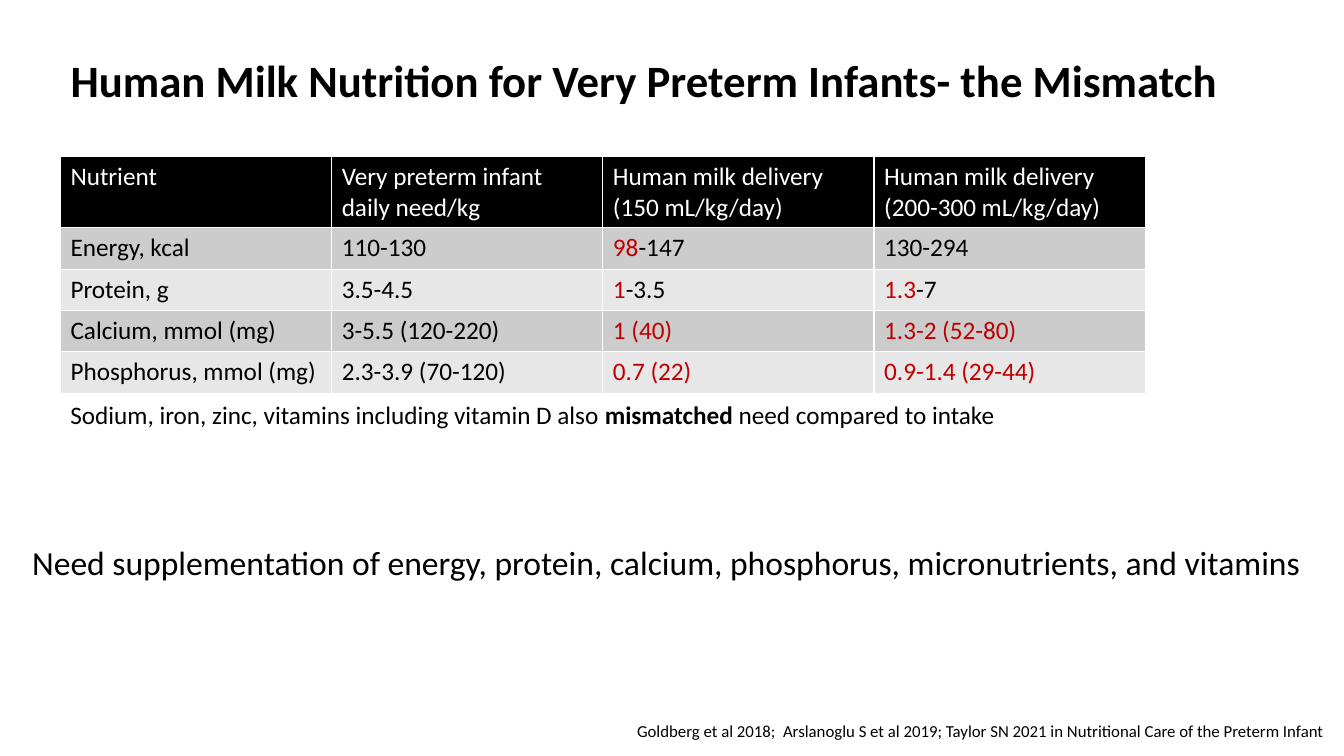
"""Build the slide on human milk nutrition for very preterm infants."""
from dataclasses import dataclass

from pptx import Presentation
from pptx.dml.color import RGBColor as Color
from pptx.enum.text import MSO_ANCHOR as Anchor, MSO_AUTO_SIZE as AutoSize, PP_ALIGN as Align
from pptx.util import Inches, Pt

TITLE = "Human Milk Nutrition for Very Preterm Infants- the Mismatch"
HEADER = [
    "Nutrient",
    "Very preterm infant daily need/kg",
    "Human milk delivery (150 mL/kg/day)",
    "Human milk delivery (200-300 mL/kg/day)",
]
# Each delivery is a (shortfall, sufficient) pair.
NUTRIENTS = [
    ("Energy, kcal", "110-130", ("98", "-147"), ("", "130-294")),
    ("Protein, g", "3.5-4.5", ("1", "-3.5"), ("1.3", "-7")),
    ("Calcium, mmol (mg)", "3-5.5 (120-220)", ("1 (40)", ""), ("1.3-2 (52-80)", "")),
    ("Phosphorus, mmol (mg)", "2.3-3.9 (70-120)", ("0.7 (22)", ""), ("0.9-1.4 (29-44)", "")),
]
NOTE = ("Sodium, iron, zinc, vitamins including vitamin D also ", "mismatched",
        " need compared to intake")
MESSAGE = "Need supplementation of energy, protein, calcium, phosphorus, micronutrients, and vitamins"
CITATION = ("Goldberg et al 2018;  Arslanoglu S et al 2019; "
            "Taylor SN 2021 in Nutritional Care of the Preterm Infant")

WIDTH, HEIGHT = 13.33, 7.5
MARGIN = 0.6
TABLE_TOP, COLUMN, HEADER_ROW, ROW = 1.55, 2.69, 0.69, 0.41


@dataclass(frozen=True)
class Theme:
    """Hold the colours, font and type sizes."""
    font: str = "Calibri"
    ink: str = "000000"
    paper: str = "FFFFFF"
    alert: str = "C00000"
    bands: tuple = ("CCCCCC", "E7E7E7")
    title: int = 32
    message: int = 24
    body: int = 18
    citation: int = 12


THEME = Theme()


def add_span(para, text, size, color=THEME.ink, bold=False):
    """Append one formatted run."""
    span = para.add_run()
    span.text = text
    span.font.name = THEME.font
    span.font.size = Pt(size)
    span.font.bold = bold
    span.font.color.rgb = Color.from_string(color)


def place(shape, left, top, width, height):
    """Position a shape given in inches."""
    shape.left, shape.top = Inches(left), Inches(top)
    shape.width, shape.height = Inches(width), Inches(height)


def add_line(page, area, spans, size, align=Align.LEFT):
    """Add a one-line text box from (text, bold) spans."""
    box = page.shapes.add_textbox(*map(Inches, area))
    box.text_frame.word_wrap = False
    box.text_frame.auto_size = AutoSize.SHAPE_TO_FIT_TEXT
    para = box.text_frame.paragraphs[0]
    para.alignment = align
    for text, bold in spans:
        add_span(para, text, size, bold=bold)


def fill_cell(cell, spans, background):
    """Write (text, color) spans into a filled cell."""
    cell.fill.solid()
    cell.fill.fore_color.rgb = Color.from_string(background)
    for text, color in spans:
        if text:
            add_span(cell.text_frame.paragraphs[0], text, THEME.body, color)


def add_title(page):
    """Format the title placeholder."""
    title = page.shapes.title
    place(title, MARGIN, 0.47, 11.79, 0.64)
    frame = title.text_frame
    frame.word_wrap = False
    frame.auto_size = AutoSize.NONE
    frame.vertical_anchor = Anchor.TOP
    frame.paragraphs[0].alignment = Align.LEFT
    add_span(frame.paragraphs[0], TITLE, THEME.title, bold=True)


def add_nutrients(page):
    """Add the table of needs and deliveries."""
    count = len(NUTRIENTS)
    area = (MARGIN, TABLE_TOP, COLUMN * len(HEADER), HEADER_ROW + ROW * count)
    table = page.shapes.add_table(count + 1, len(HEADER), *map(Inches, area)).table
    for column in table.columns:
        column.width = Inches(COLUMN)
    for index, row in enumerate(table.rows):
        row.height = Inches(ROW if index else HEADER_ROW)
    for cell, text in zip(table.rows[0].cells, HEADER):
        fill_cell(cell, [(text, THEME.paper)], THEME.ink)
    for index, (name, need, *deliveries) in enumerate(NUTRIENTS):
        pairs = [("", name), ("", need), *deliveries]
        for cell, (short, enough) in zip(table.rows[index + 1].cells, pairs):
            spans = [(short, THEME.alert), (enough, THEME.ink)]
            fill_cell(cell, spans, THEME.bands[index % 2])


def main():
    """Create and save the deck."""
    deck = Presentation()
    deck.slide_width, deck.slide_height = Inches(WIDTH), Inches(HEIGHT)
    page = deck.slides.add_slide(deck.slide_layouts[5])
    add_title(page)
    add_nutrients(page)
    note = [(text, text == "mismatched") for text in NOTE]
    add_line(page, (MARGIN, 3.91, 9.39, 0.4), note, THEME.body)
    add_line(page, (0.22, 5.33, 12.98, 0.5), [(MESSAGE, False)], THEME.message)
    add_line(page, (WIDTH - 7.11, 7.1, 7.1, 0.3), [(CITATION, False)], THEME.citation)
    deck.save("out.pptx")


if __name__ == "__main__":
    main()
